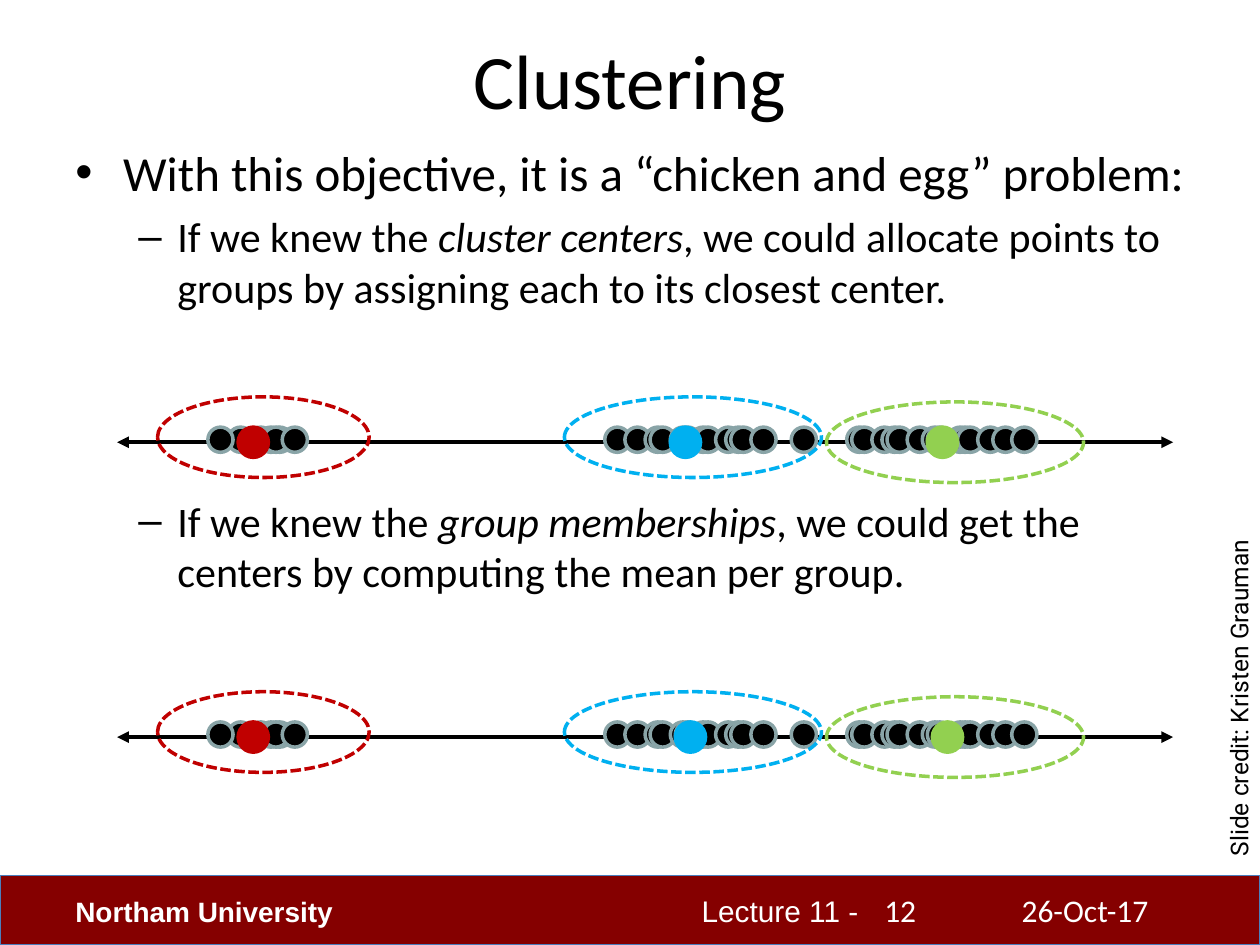
from dataclasses import dataclass

from lxml import etree
from pptx import Presentation, util as u
from pptx.dml.color import RGBColor
from pptx.enum import dml, shapes, text
from pptx.oxml import ns


@dataclass(frozen=True)
class Theme:
    ink: str = "000000"
    paper: str = "FFFFFF"
    footer: str = "850000"
    footer_edge: str = "4B7EBC"
    point_edge: str = "89A4A7"
    red: str = "C00000"
    blue: str = "00B0F0"
    green: str = "92D050"
    body_font: str = "Calibri"
    footer_font: str = "Arial"
    credit_font: str = "Roboto"
    title_size: float = 44
    bullet_size: float = 28
    sub_size: float = 24
    date_size: float = 18
    lecture_size: float = 17
    school_size: float = 16
    credit_size: float = 14
    outline: float = 2
    axis: float = 2.25


class SlideBuilder:
    def __init__(self, slide, theme):
        self.slide = slide
        self.theme = theme

    def style(self, paragraph, size, font=None, color=None, bold=False):
        paragraph.font.size = u.Pt(size)
        paragraph.font.name = font or self.theme.body_font
        paragraph.font.color.rgb = RGBColor.from_string(color or self.theme.ink)
        paragraph.font.bold = bold

    def title(self, wording, *box):
        title = self.slide.shapes.title
        title.left, title.top, title.width, title.height = map(u.Inches, box)
        title.text_frame.text = wording
        title.text_frame.vertical_anchor = text.MSO_ANCHOR.MIDDLE
        paragraph = title.text_frame.paragraphs[0]
        paragraph.alignment = text.PP_ALIGN.CENTER
        self.style(paragraph, self.theme.title_size)

    def text_box(self, *box):
        frame_box = self.slide.shapes.add_textbox(*map(u.Inches, box))
        frame_box.text_frame.word_wrap = True
        return frame_box

    def label(self, wording, box, size, **look):
        label = self.text_box(*box)
        paragraph = label.text_frame.paragraphs[0]
        paragraph.text = wording
        self.style(paragraph, size, **look)
        return label

    def bullet(self, paragraph, parts, mark, size, margin, hanging, before):
        """Fill a bulleted paragraph; every second part is italic."""
        for index, part in enumerate(parts):
            run = paragraph.add_run()
            run.text = part
            if index % 2:
                run.font.italic = True
        self.style(paragraph, size)
        paragraph.space_before = u.Pt(before)
        props = paragraph._p.get_or_add_pPr()
        props.set("marL", str(u.Inches(margin)))
        props.set("indent", str(-u.Inches(hanging)))
        bullet_font = etree.Element(ns.qn("a:buFont"), typeface="Arial")
        bullet_char = etree.Element(ns.qn("a:buChar"), char=mark)
        first_default = props.find(ns.qn("a:defRPr"))
        first_default.addprevious(bullet_font)
        first_default.addprevious(bullet_char)

    def shape(self, kind, box, fill=None, line=None, width=None, dashed=False, parent=None):
        parent = parent or self.slide.shapes
        shape = parent.add_shape(kind, *map(u.Inches, box))
        shape.shadow.inherit = False
        if fill:
            shape.fill.solid()
            shape.fill.fore_color.rgb = RGBColor.from_string(fill)
        else:
            shape.fill.background()
        shape.line.color.rgb = RGBColor.from_string(line or fill)
        shape.line.width = u.Pt(width or self.theme.outline)
        if dashed:
            shape.line.dash_style = dml.MSO_LINE.SQUARE_DOT
        return shape

    def ellipse(self, *box, **look):
        return self.shape(shapes.MSO_SHAPE.OVAL, box, **look)

    def axis(self, parent, left, right, y):
        axis = parent.add_connector(
            shapes.MSO_CONNECTOR.STRAIGHT, *map(u.Inches, (left, y, right, y))
        )
        axis.line.color.rgb = RGBColor.from_string(self.theme.ink)
        axis.line.width = u.Pt(self.theme.axis)
        for end in ("a:headEnd", "a:tailEnd"):
            etree.SubElement(axis.line._get_or_add_ln(), ns.qn(end), type="triangle")
        etree.SubElement(axis._element.spPr, ns.qn("a:effectLst"))

    def number_line(self, y, point_lefts, clusters, center_lefts):
        """Draw points, cluster outlines and cluster centers on an axis at y."""
        group = self.slide.shapes.add_group_shape().shapes
        self.axis(group, 0.93, 9.31, y)
        for left in point_lefts:
            self.ellipse(left, y - 0.12, 0.2, 0.2, fill=self.theme.ink,
                         line=self.theme.point_edge, parent=group)
        for (color, left, rise, width), center_left in zip(clusters, center_lefts):
            self.ellipse(center_left, y - 0.12, 0.24, 0.24, fill=color)
            self.ellipse(left, y - rise, width, 0.64, line=color, dashed=True)


POINT_LEFTS = (
    1.81, 1.97, 1.65, 2.12, 4.8, 4.96, 5.12, 5.16, 5.32, 5.36, 2.05, 2.09,
    2.24, 6.72, 6.76, 6.92, 7, 7.04, 7.2, 5.48, 5.52, 5.68, 5.76, 5.8, 5.96,
    6.28, 7.32, 7.36, 7.52, 7.56, 7.6, 7.76, 7.88, 8.03,
)


def main():
    theme = Theme()
    deck = Presentation()
    deck.slide_width, deck.slide_height = u.Inches(10), u.Inches(7.5)
    page = SlideBuilder(deck.slides.add_slide(deck.slide_layouts[5]), theme)

    page.shape(shapes.MSO_SHAPE.RECTANGLE, (0, 6.95, 10, 0.55),
               fill=theme.footer, line=theme.footer_edge, width=0.75)
    page.label("Lecture 11 -", (5.47, 7.04, 1.45, 0.4), theme.lecture_size,
               font=theme.footer_font, color=theme.paper)
    page.label("Northam University", (0.5, 7.05, 2.33, 0.37), theme.school_size,
               font=theme.footer_font, color=theme.paper, bold=True)

    page.title("Clustering", 0.5, 0, 9, 1.25)

    argument = page.text_box(0.5, 1.08, 9, 4.95).text_frame
    page.bullet(
        argument.paragraphs[0],
        ["With this objective, it is a “chicken and egg” problem:"],
        "•", theme.bullet_size, 0.38, 0.38, 0,
    )
    cases = (
        ("cluster centers",
         ", we could allocate points to groups by assigning each to its closest center.", 5.5),
        ("group memberships",
         ", we could get the centers by computing the mean per group.", 105),
    )
    for known, consequence, before in cases:
        page.bullet(argument.add_paragraph(), ["If we knew the ", known, consequence],
                    "–", theme.sub_size, 0.81, 0.31, before)

    clusters = (
        (theme.red, 1.25, 0.36, 1.68),
        (theme.blue, 4.48, 0.36, 2.04),
        (theme.green, 6.56, 0.32, 2.04),
    )
    page.number_line(3.51, POINT_LEFTS, clusters, (1.89, 5.32, 7.36))
    page.number_line(5.85, POINT_LEFTS, clusters, (1.89, 5.36, 7.4))

    credit = page.label("Slide credit: Kristen Grauman", (8.43, 5.32, 2.81, 0.34),
                        theme.credit_size, font=theme.credit_font)
    credit.rotation = 270
    page.label("26-Oct-17", (8.01, 7.02, 1.74, 0.4), theme.date_size, color=theme.paper)
    page.label("12", (6.92, 7.02, 1.1, 0.4), theme.date_size, color=theme.paper)

    deck.save("out.pptx")


if __name__ == "__main__":
    main()
